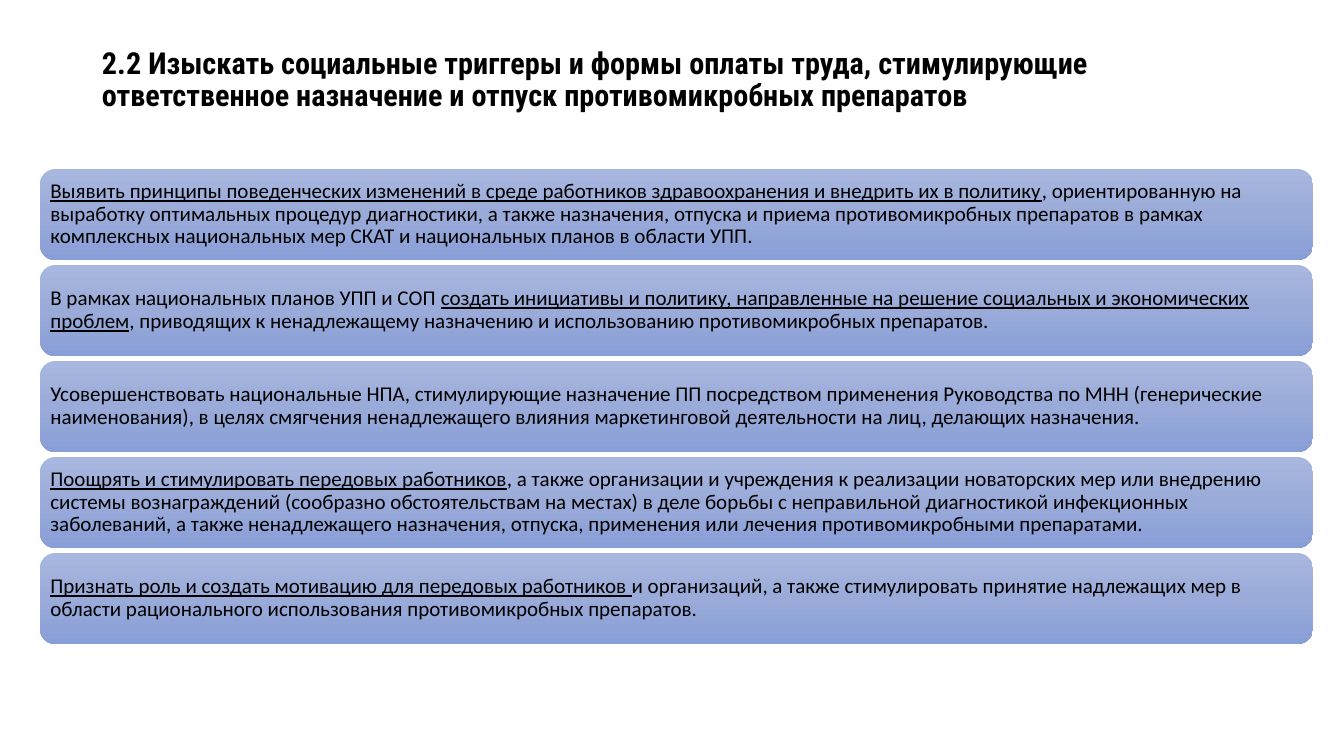
from copy import deepcopy

from pptx import Presentation
from pptx import util as u
from pptx.dml.color import RGBColor
from pptx.enum import shapes, text
from pptx.oxml.ns import qn

EMU_PER_PX = 914400 / 100.8
COLORS = {"text": "000000", "top": "A8B7DF", "middle": "9AABD9", "bottom": "889ED7"}
TITLE = (
    "2.2 Изыскать социальные триггеры и формы оплаты труда, стимулирующие "
    "ответственное назначение и отпуск противомикробных препаратов"
)
MEASURES = [
    [
        ("Выявить принципы поведенческих изменений в среде работников здравоохранения "
         "и внедрить их в политику", True),
        (", ориентированную на выработку оптимальных процедур диагностики, а также "
         "назначения, отпуска и приема противомикробных препаратов в рамках комплексных "
         "национальных мер СКАТ и национальных планов в области УПП.", False),
    ],
    [
        ("В рамках национальных планов УПП и СОП ", False),
        ("создать инициативы и политику, направленные на решение социальных и "
         "экономических проблем", True),
        (", приводящих к ненадлежащему назначению и использованию противомикробных "
         "препаратов.", False),
    ],
    [
        ("Усовершенствовать национальные НПА, стимулирующие назначение ПП посредством "
         "применения Руководства по МНН (генерические наименования), в целях смягчения "
         "ненадлежащего влияния маркетинговой деятельности на лиц, делающих назначения.",
         False),
    ],
    [
        ("Поощрять и стимулировать передовых работников", True),
        (", а также организации и учреждения к реализации новаторских мер или внедрению "
         "системы вознаграждений (сообразно обстоятельствам на местах) в деле борьбы с "
         "неправильной диагностикой инфекционных заболеваний, а также ненадлежащего "
         "назначения, отпуска, применения или лечения противомикробными препаратами.",
         False),
    ],
    [
        ("Признать роль и создать мотивацию для передовых работников ", True),
        ("и организаций, а также стимулировать принятие надлежащих мер в области "
         "рационального использования противомикробных препаратов.", False),
    ],
]


def px(length):
    return u.Emu(round(length * EMU_PER_PX))


def color(name):
    return RGBColor.from_string(COLORS[name])


def write_text(shape, runs, font, size, bold=False, anchor="MIDDLE", insets=(6, 6)):
    frame = shape.text_frame
    frame.word_wrap = True
    frame.vertical_anchor = text.MSO_ANCHOR[anchor]
    frame.margin_left = frame.margin_right = px(insets[0])
    frame.margin_top = frame.margin_bottom = px(insets[1])
    paragraph = frame.paragraphs[0]
    paragraph.alignment = text.PP_ALIGN.LEFT
    paragraph.line_spacing = 0.9
    for words, underlined in runs:
        run = paragraph.add_run()
        run.text = words
        run.font.name = font
        run.font.size = u.Pt(size)
        run.font.bold = bold
        run.font.underline = underlined
        run.font.color.rgb = color("text")


def fill_gradient(shape):
    fill = shape.fill
    fill.gradient()
    fill.gradient_angle = 270
    first = shape.element.spPr.find(".//" + qn("a:gs"))
    middle = deepcopy(first)
    middle.set("pos", "50000")
    first.addnext(middle)
    for stop, name in zip(fill.gradient_stops, ("top", "middle", "bottom")):
        stop.color.rgb = color(name)


def add_title(slide, left, top, width, height):
    title = slide.shapes.add_textbox(px(left), px(top), px(width), px(height))
    write_text(title, [(TITLE, False)], font="Roboto Condensed", size=21.6,
               bold=True, anchor="TOP", insets=(10, 8))


def add_measures(slide, left, top, width, height, gap=5):
    bar_height = (height - gap * (len(MEASURES) - 1)) // len(MEASURES)
    for index, runs in enumerate(MEASURES):
        bar_top = top + index * (bar_height + gap)
        bar = slide.shapes.add_shape(
            shapes.MSO_SHAPE.ROUNDED_RECTANGLE,
            px(left), px(bar_top), px(width), px(bar_height))
        bar.shadow.inherit = False
        bar.line.fill.background()
        fill_gradient(bar)
        write_text(bar, runs, font="Calibri", size=15)


def main():
    presentation = Presentation()
    presentation.slide_width = px(1344)
    presentation.slide_height = px(756)
    slide = presentation.slides.add_slide(presentation.slide_layouts[6])
    add_title(slide, 92, 40, 1160, 146)
    add_measures(slide, 40, 169, 1273, 475)
    presentation.save("out.pptx")


if __name__ == "__main__":
    main()
